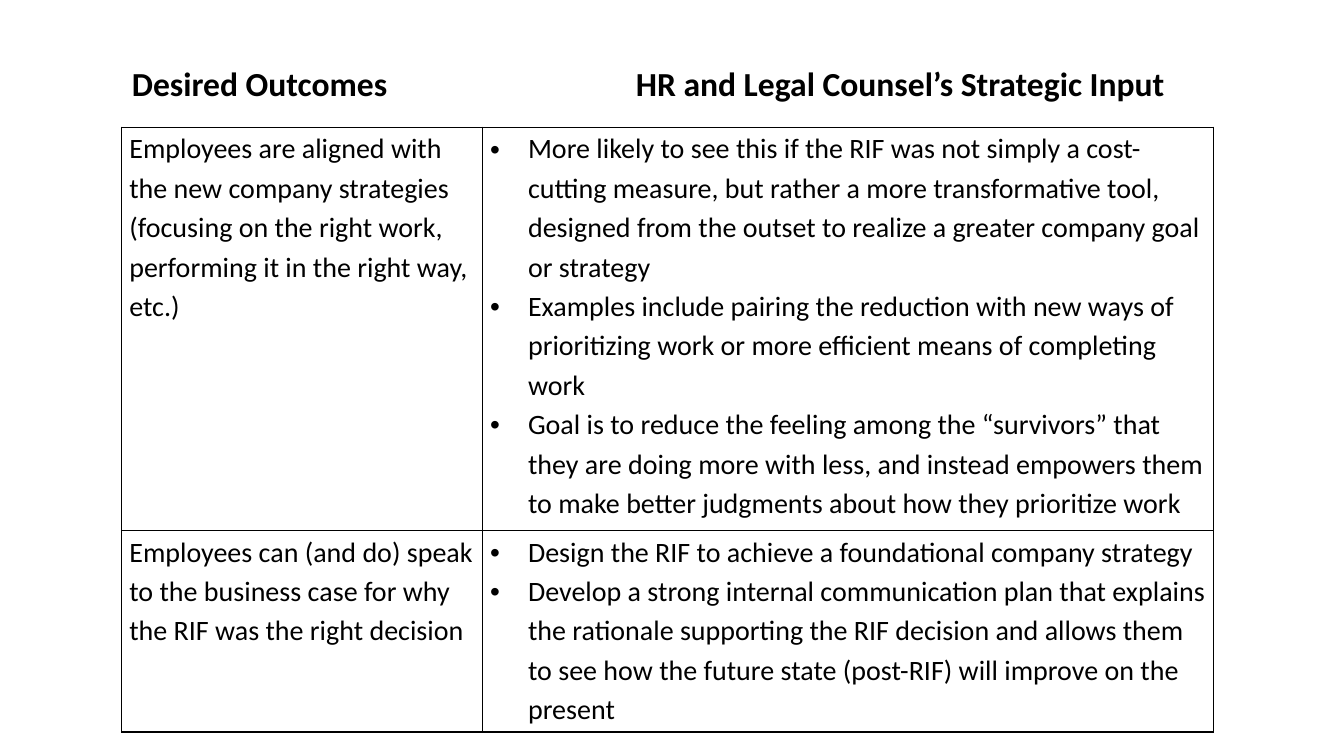
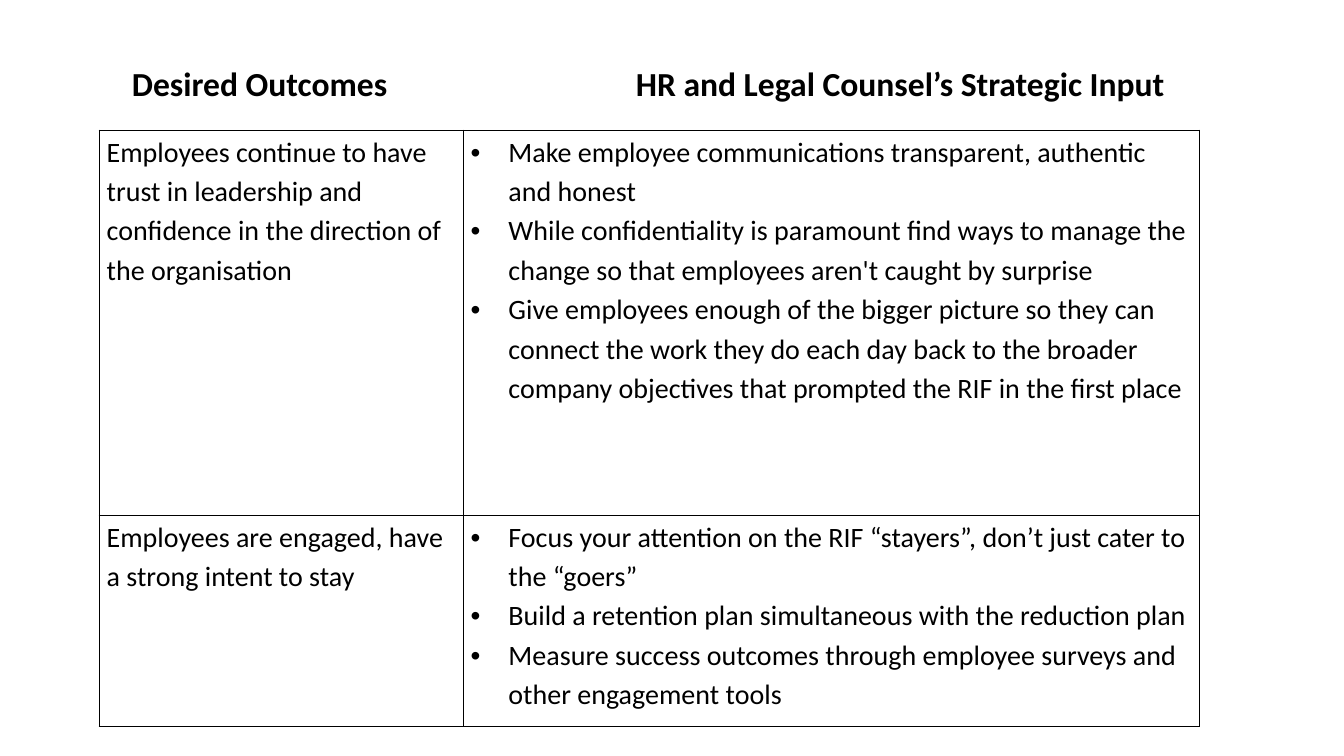
from dataclasses import dataclass

from lxml import etree
from pptx import Presentation
from pptx.dml.color import RGBColor
from pptx.enum.text import MSO_ANCHOR, MSO_AUTO_SIZE, PP_ALIGN
from pptx.oxml.ns import qn
from pptx.presentation import Presentation as Deck
from pptx.slide import Slide
from pptx.table import _Cell as Cell
from pptx.util import Pt

TOP = MSO_ANCHOR.TOP
NO_RESIZE = MSO_AUTO_SIZE.NONE
LEFT = PP_ALIGN.LEFT
TITLE_ONLY = 5


@dataclass(frozen=True)
class Theme:
    font: str = "Calibri"
    ink: RGBColor = RGBColor(0, 0, 0)
    title_size: float = 24
    body_size: float = 20
    line_spacing: float = 1.15
    border_width: float = 1
    cell_inset: float = 5.4
    bullet_indent: float = 27
    heading_tab: float = 360


@dataclass(frozen=True)
class Outcome:
    goal: str
    inputs: tuple[str, ...]
    height: float


@dataclass(frozen=True)
class OutcomePage:
    left: float
    top: float
    columns: tuple[float, float]
    outcomes: tuple[Outcome, ...]


THEME = Theme()
HEADINGS = ("Desired Outcomes", "HR and Legal Counsel’s Strategic Input")

PAGES = (
    OutcomePage(87, 90.8, (257.8, 522), (
        Outcome(
            "Employees are aligned with the new company strategies (focusing on the "
            "right work, performing it in the right way, etc.)",
            (
                "More likely to see this if the RIF was not simply a cost-cutting measure, "
                "but rather a more transformative tool, designed from the outset to realize "
                "a greater company goal or strategy",
                "Examples include pairing the reduction with new ways of prioritizing work "
                "or more efficient means of completing work",
                "Goal is to reduce the feeling among the “survivors” that they are doing "
                "more with less, and instead empowers them to make better judgments about "
                "how they prioritize work",
            ),
            288,
        ),
        Outcome(
            "Employees can (and do) speak to the business case for why the RIF was the "
            "right decision",
            (
                "Design the RIF to achieve a foundational company strategy",
                "Develop a strong internal communication plan that explains the rationale "
                "supporting the RIF decision and allows them to see how the future state "
                "(post-RIF) will improve on the present",
            ),
            144,
        ),
    )),
    OutcomePage(70.8, 93, (260, 526), (
        Outcome(
            "Employees continue to have trust in leadership and confidence in the "
            "direction of the organisation",
            (
                "Make employee communications transparent, authentic and honest",
                "While confidentiality is paramount find ways to manage the change so that "
                "employees aren't caught by surprise",
                "Give employees enough of the bigger picture so they can connect the work "
                "they do each day back to the broader company objectives that prompted the "
                "RIF in the first place",
            ),
            275,
        ),
        Outcome(
            "Employees are engaged, have a strong intent to stay",
            (
                "Focus your attention on the RIF “stayers”, don’t just cater to the “goers”",
                "Build a retention plan simultaneous with the reduction plan",
                "Measure success outcomes through employee surveys and other engagement tools",
            ),
            151,
        ),
    )),
)


def write_para(para, text: str, size: float, bold: bool = False) -> None:
    para.alignment = LEFT
    para.line_spacing = THEME.line_spacing
    span = para.add_run()
    span.text = text
    span.font.name = THEME.font
    span.font.size = Pt(size)
    span.font.bold = bold
    span.font.color.rgb = THEME.ink


def add_bullet(para) -> None:
    properties = para._p.get_or_add_pPr()
    indent = Pt(THEME.bullet_indent)
    properties.set("marL", str(indent))
    properties.set("indent", str(-indent))
    etree.SubElement(properties, qn("a:buFont"), typeface="Arial")
    etree.SubElement(properties, qn("a:buChar"), char="•")


def add_headings(page: Slide) -> None:
    title = page.shapes.title
    title.left, title.top, title.width, title.height = Pt(87), Pt(36.7), Pt(770), Pt(41)
    frame = title.text_frame
    frame.word_wrap = True
    frame.auto_size = NO_RESIZE
    frame.vertical_anchor = TOP
    para = frame.paragraphs[0]
    write_para(para, "\t".join(HEADINGS), THEME.title_size, bold=True)
    tabs = etree.SubElement(para._p.get_or_add_pPr(), qn("a:tabLst"))
    etree.SubElement(tabs, qn("a:tab"), pos=str(Pt(THEME.heading_tab)), algn="l")


def style_cell(cell: Cell) -> None:
    cell.margin_left = cell.margin_right = Pt(THEME.cell_inset)
    cell.margin_top = cell.margin_bottom = Pt(0)
    cell.vertical_anchor = TOP
    properties = cell._tc.get_or_add_tcPr()
    for side in ("a:lnL", "a:lnR", "a:lnT", "a:lnB"):
        line = etree.SubElement(properties, qn(side), w=str(Pt(THEME.border_width)))
        fill = etree.SubElement(line, qn("a:solidFill"))
        etree.SubElement(fill, qn("a:srgbClr"), val=str(THEME.ink))
    cell.fill.background()


def write_cell(cell: Cell, texts: tuple[str, ...], bulleted: bool) -> None:
    style_cell(cell)
    frame = cell.text_frame
    for index, text in enumerate(texts):
        para = frame.add_paragraph() if index else frame.paragraphs[0]
        write_para(para, text, THEME.body_size)
        if bulleted:
            add_bullet(para)


def add_outcome_table(page: Slide, content: OutcomePage) -> None:
    outcomes = content.outcomes
    table = page.shapes.add_table(
        len(outcomes), len(content.columns), Pt(content.left), Pt(content.top),
        Pt(sum(content.columns)), Pt(sum(outcome.height for outcome in outcomes)),
    ).table
    table.first_row = False
    table.horz_banding = False
    for column, width in zip(table.columns, content.columns):
        column.width = Pt(width)
    for row, outcome in zip(table.rows, outcomes):
        row.height = Pt(outcome.height)
        write_cell(row.cells[0], (outcome.goal,), bulleted=False)
        write_cell(row.cells[1], outcome.inputs, bulleted=True)


def add_page(deck: Deck, content: OutcomePage) -> None:
    page = deck.slides.add_slide(deck.slide_layouts[TITLE_ONLY])
    add_headings(page)
    add_outcome_table(page, content)


def main() -> None:
    deck = Presentation()
    deck.slide_width, deck.slide_height = Pt(960), Pt(540)
    for content in PAGES:
        add_page(deck, content)
    deck.save("out.pptx")


if __name__ == "__main__":
    main()
